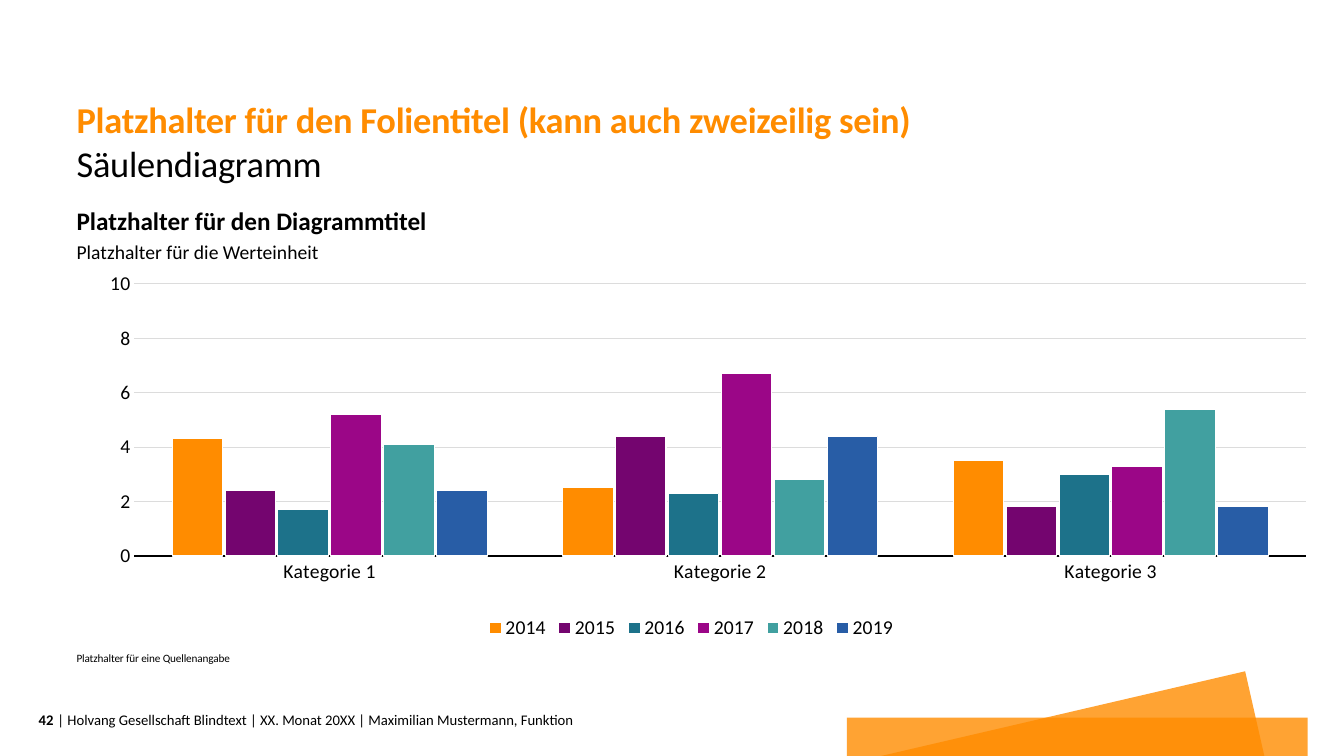
from lxml import etree
from pptx import Presentation
from pptx.chart.data import CategoryChartData
from pptx.dml.color import RGBColor
from pptx.enum.chart import XL_CHART_TYPE, XL_LEGEND_POSITION, XL_TICK_MARK
from pptx.enum.shapes import MSO_SHAPE
from pptx.enum.text import MSO_ANCHOR, PP_ALIGN
from pptx.oxml.ns import qn
from pptx.util import Inches, Pt

COLUMN_CLUSTERED = XL_CHART_TYPE.COLUMN_CLUSTERED
LEGEND_BOTTOM = XL_LEGEND_POSITION.BOTTOM
TICK_NONE = XL_TICK_MARK.NONE
RECTANGLE = MSO_SHAPE.RECTANGLE
TOP, MIDDLE, BOTTOM = MSO_ANCHOR.TOP, MSO_ANCHOR.MIDDLE, MSO_ANCHOR.BOTTOM
LEFT, RIGHT = PP_ALIGN.LEFT, PP_ALIGN.RIGHT

FONT = "Calibri"
COLORS = {
    "orange": "FF8C00",
    "purple": "74056F",
    "petrol": "1D728A",
    "magenta": "9B0687",
    "turquoise": "41A0A0",
    "blue": "285DA6",
    "black": "000000",
    "white": "FFFFFF",
    "grid": "DCDCDC",
}
CATEGORIES = ["Kategorie 1", "Kategorie 2", "Kategorie 3"]
SERIES = [
    ("2014", (4.3, 2.5, 3.5), "orange"),
    ("2015", (2.4, 4.4, 1.8), "purple"),
    ("2016", (1.7, 2.3, 3), "petrol"),
    ("2017", (5.2, 6.7, 3.3), "magenta"),
    ("2018", (4.1, 2.8, 5.4), "turquoise"),
    ("2019", (2.4, 4.4, 1.8), "blue"),
]
PLOT_AREA = {"x": 0.047, "y": 0.034, "w": 0.953, "h": 0.73}


def color(name):
    return RGBColor.from_string(COLORS[name])


def add_text(slide, box, text, size, tint="black", bold=False, anchor=TOP,
             align=LEFT, line_spacing=1.0, tracking=0):
    shape = slide.shapes.add_textbox(*map(Inches, box))
    frame = shape.text_frame
    frame.word_wrap = True
    frame.vertical_anchor = anchor
    frame.margin_left = frame.margin_right = 0
    frame.margin_top = frame.margin_bottom = 0
    paragraph = frame.paragraphs[0]
    paragraph.alignment = align
    paragraph.line_spacing = line_spacing
    run = paragraph.add_run()
    run.text = text
    run.font.name = FONT
    run.font.size = Pt(size)
    run.font.bold = bold
    run.font.color.rgb = color(tint)
    if tracking:
        run.font._element.set("spc", str(round(tracking * 100)))


def paint_translucent(shape, tint, opacity):
    shape.shadow.inherit = False
    shape.fill.solid()
    shape.fill.fore_color.rgb = color(tint)
    shape.line.fill.background()
    fill_color = shape._element.spPr.find(qn("a:solidFill"))[0]
    etree.SubElement(fill_color, qn("a:alpha")).set("val", str(opacity * 1000))


def add_corner_decoration(slide, box):
    left, top, width, height = box
    bar_top = top + 0.46
    bar = slide.shapes.add_shape(
        RECTANGLE, Inches(left), Inches(bar_top), Inches(width), Inches(top + height - bar_top))
    paint_translucent(bar, "orange", 80)

    corners = [(left + 4.14, top + height), (left + 3.95, top), (left + 0.34, top + height)]
    points = [(Inches(x), Inches(y)) for x, y in corners]
    builder = slide.shapes.build_freeform(*points[0])
    builder.add_line_segments(points[1:], close=True)
    paint_translucent(builder.convert_to_shape(), "orange", 80)


def add_footer(slide, box):
    left, top, width, height = box
    number_width = 0.31
    text_offset = 0.35
    add_text(slide, (left + text_offset, top, width - text_offset, height),
             "| Holvang Gesellschaft Blindtext | XX. Monat 20XX | Maximilian Mustermann, Funktion",
             10.5, anchor=MIDDLE)
    add_text(slide, (left, top, number_width, height), "42", 10.5,
             bold=True, anchor=MIDDLE, align=RIGHT)


def add_heading(slide, box):
    left, top, width, height = box
    line_height = 0.42
    add_text(slide, (left, top, width, line_height),
             "Platzhalter für den Folientitel (kann auch zweizeilig sein)", 26,
             tint="orange", bold=True, anchor=BOTTOM, line_spacing=0.95, tracking=-0.2)
    add_text(slide, (left, top + height - line_height, width, line_height),
             "Säulendiagramm", 26, line_spacing=0.95, tracking=-0.2)


def add_column_chart(slide, box):
    chart_data = CategoryChartData()
    chart_data.categories = CATEGORIES
    for name, values, tint in SERIES:
        chart_data.add_series(name, values)
    chart = slide.shapes.add_chart(COLUMN_CLUSTERED, *map(Inches, box), chart_data).chart
    chart.has_title = False
    chart.font.name = FONT
    chart.font.size = Pt(14)
    chart.font.color.rgb = color("black")
    chart.has_legend = True
    chart.legend.position = LEGEND_BOTTOM
    chart.legend.include_in_layout = False

    plot = chart.plots[0]
    plot.vary_by_categories = False
    plot.gap_width = 150
    plot.overlap = -5
    for series, (name, values, tint) in zip(plot.series, SERIES):
        series.invert_if_negative = False
        series.format.fill.solid()
        series.format.fill.fore_color.rgb = color(tint)
        series.format.line.color.rgb = color("white")
        series.format.line.width = Pt(0.75)

    category_axis, value_axis = chart.category_axis, chart.value_axis
    for axis in (category_axis, value_axis):
        axis.major_tick_mark = axis.minor_tick_mark = TICK_NONE
    category_axis.format.line.color.rgb = color("black")
    category_axis.format.line.width = Pt(1)
    value_axis.minimum_scale = 0
    value_axis.maximum_scale = 10
    value_axis.major_unit = 2
    value_axis.tick_labels.number_format = "0"
    value_axis.tick_labels.number_format_is_linked = False
    value_axis.format.line.fill.background()
    value_axis.has_major_gridlines = True
    value_axis.major_gridlines.format.line.color.rgb = color("grid")
    value_axis.major_gridlines.format.line.width = Pt(0.5)
    fix_plot_area(chart)


def fix_plot_area(chart):
    plot_area = chart._chartSpace.find(".//" + qn("c:plotArea"))
    for layout in plot_area.findall(qn("c:layout")):
        plot_area.remove(layout)
    layout = etree.Element(qn("c:layout"))
    plot_area.insert(0, layout)
    manual = etree.SubElement(layout, qn("c:manualLayout"))
    settings = [("layoutTarget", "inner"), ("xMode", "edge"), ("yMode", "edge")]
    for tag, value in settings + list(PLOT_AREA.items()):
        etree.SubElement(manual, qn("c:" + tag)).set("val", str(value))


def add_chart_region(slide, box):
    left, top, width, height = box
    source_height = 0.14
    add_text(slide, (left, top, width, 0.31), "Platzhalter für den Diagrammtitel", 18,
             bold=True, line_spacing=1.05)
    add_text(slide, (left, top + 0.35, width, 0.24), "Platzhalter für die Werteinheit", 14,
             line_spacing=1.05)
    add_column_chart(slide, (left, top + 0.67, width, 3.7))
    add_text(slide, (left, top + height - source_height, width, source_height),
             "Platzhalter für eine Quellenangabe", 8, anchor=BOTTOM,
             line_spacing=1.05, tracking=-0.1)


def main():
    presentation = Presentation()
    presentation.slide_width = Inches(13.33)
    presentation.slide_height = Inches(7.5)
    slide = presentation.slides.add_slide(presentation.slide_layouts[6])
    add_corner_decoration(slide, (8.4, 6.66, 4.57, 0.84))
    add_footer(slide, (0.22, 7.05, 7.44, 0.18))
    add_heading(slide, (0.76, 0.99, 10.71, 0.86))
    add_chart_region(slide, (0.76, 2.02, 12.2, 4.57))
    presentation.save("out.pptx")


if __name__ == "__main__":
    main()
